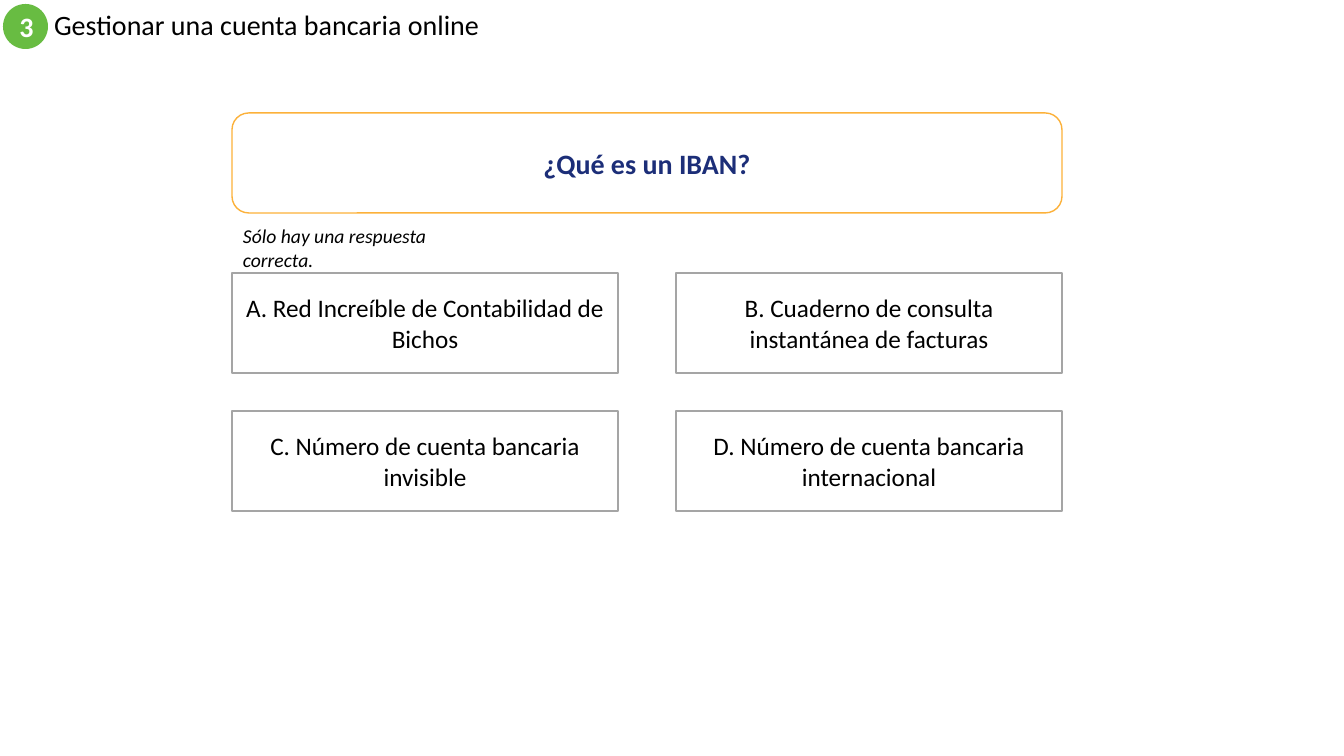
from pptx import Presentation
from pptx.dml.color import RGBColor
from pptx.enum import shapes, text
from pptx.util import Pt

PX = 914400 / 100.8
BLACK = RGBColor(0x00, 0x00, 0x00)
WHITE = RGBColor(0xFF, 0xFF, 0xFF)
GREEN = RGBColor(0x68, 0xBC, 0x42)
ORANGE = RGBColor(0xFC, 0xB1, 0x3A)
NAVY = RGBColor(0x1C, 0x2E, 0x78)
GRAY = RGBColor(0xA5, 0xA5, 0xA5)


def px(*lengths):
    return [round(length * PX) for length in lengths]


def write(shape, wording, size=20, color=BLACK, bold=False, italic=False,
          align=text.PP_ALIGN.CENTER, anchor=text.MSO_ANCHOR.MIDDLE, spacing=1.0):
    frame = shape.text_frame
    frame.text = wording
    frame.word_wrap = True
    frame.auto_size = text.MSO_AUTO_SIZE.NONE
    frame.vertical_anchor = anchor
    paragraph = frame.paragraphs[0]
    paragraph.alignment = align
    paragraph.line_spacing = spacing
    font = paragraph.runs[0].font
    font.name = "Calibri"
    font.size = Pt(size)
    font.bold = bold
    font.italic = italic
    font.color.rgb = color


presentation = Presentation()
presentation.slide_width, presentation.slide_height = px(1344, 756)
slide = presentation.slides.add_slide(presentation.slide_layouts[5])

title = slide.shapes.title
title.left, title.top, title.width, title.height = px(44, 4, 806, 45)
write(title, "Gestionar una cuenta bancaria online", align=text.PP_ALIGN.LEFT, spacing=0.9)

badge = slide.shapes.add_shape(shapes.MSO_SHAPE.OVAL, *px(3, 4, 45, 45))
badge.shadow.inherit = False
badge.fill.solid()
badge.fill.fore_color.rgb = GREEN
badge.line.fill.background()
write(badge, "3", color=WHITE, bold=True)

LEFT, BOX_HEIGHT = 232, 100
ANSWER_TOP, ANSWER_WIDTH = 273, 386
COLUMN_STEP, ROW_STEP = 444, 138

question = slide.shapes.add_shape(
    shapes.MSO_SHAPE.ROUNDED_RECTANGLE,
    *px(LEFT, 113, COLUMN_STEP + ANSWER_WIDTH, BOX_HEIGHT))
write(question, "¿Qué es un IBAN?", color=NAVY, bold=True)
boxes = [(question, ORANGE)]

answers = [
    "A. Red Increíble de Contabilidad de Bichos",
    "B. Cuaderno de consulta instantánea de facturas",
    "C. Número de cuenta bancaria invisible",
    "D. Número de cuenta bancaria internacional",
]
for index, wording in enumerate(answers):
    row, column = divmod(index, 2)
    answer = slide.shapes.add_shape(
        shapes.MSO_SHAPE.RECTANGLE,
        *px(LEFT + column * COLUMN_STEP, ANSWER_TOP + row * ROW_STEP, ANSWER_WIDTH, BOX_HEIGHT))
    write(answer, wording, size=18)
    boxes.append((answer, GRAY))

for box, outline in boxes:
    box.shadow.inherit = False
    box.fill.solid()
    box.fill.fore_color.rgb = WHITE
    box.line.color.rgb = outline
    box.line.width = Pt(1)

hint = slide.shapes.add_textbox(*px(233, 219, 238, 34))
write(hint, "Sólo hay una respuesta correcta.", size=14, italic=True,
      align=text.PP_ALIGN.LEFT, anchor=text.MSO_ANCHOR.TOP)

presentation.save("out.pptx")
